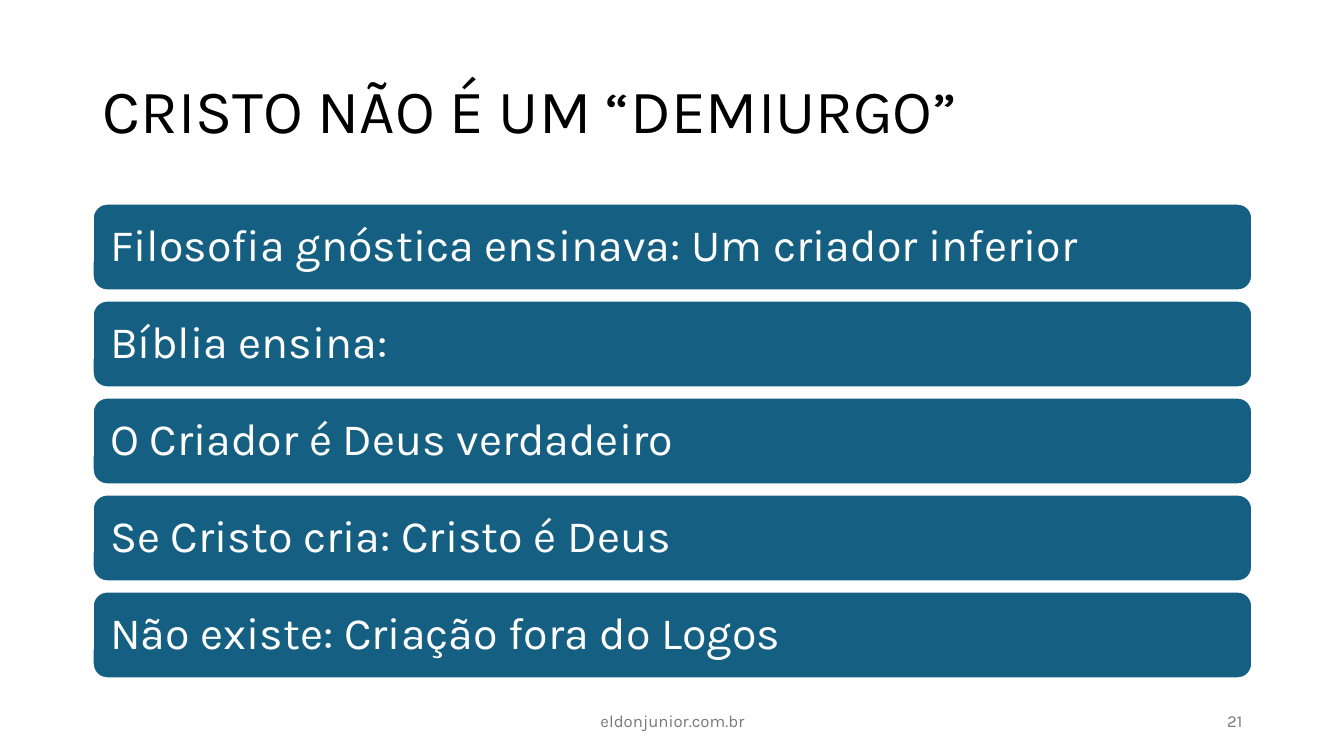
from pptx import Presentation
from pptx.dml.color import RGBColor
from pptx.enum.shapes import MSO_SHAPE as Shape
from pptx.enum.text import MSO_ANCHOR as Anchor, PP_ALIGN as Align
from pptx.util import Inches, Pt

BLACK = RGBColor(0x00, 0x00, 0x00)
WHITE = RGBColor(0xFF, 0xFF, 0xFF)
BLUE = RGBColor(0x15, 0x60, 0x82)
GRAY = RGBColor(0x79, 0x79, 0x79)
FONT = "Karla"
LEFT, WIDTH = 0.92, 11.5
POINTS = [
    "Filosofia gnóstica ensinava: Um criador inferior",
    "Bíblia ensina:",
    "O Criador é Deus verdadeiro",
    "Se Cristo cria: Cristo é Deus",
    "Não existe: Criação fora do Logos",
]


def write(shape, text, size, color, align=Align.LEFT, line=1.0, inset=None):
    frame = shape.text_frame
    frame.word_wrap = True
    frame.vertical_anchor = Anchor.MIDDLE
    if inset is not None:
        frame.margin_left = frame.margin_right = Inches(inset)
        frame.margin_top = frame.margin_bottom = Inches(inset)
    para = frame.paragraphs[0]
    para.alignment = align
    para.line_spacing = line
    run = para.add_run()
    run.text = text
    run.font.name = FONT
    run.font.size = Pt(size)
    run.font.color.rgb = color


def add_label(slide, box, text, size, color, **form):
    label = slide.shapes.add_textbox(*map(Inches, box))
    write(label, text, size, color, **form)


def add_bars(slide, box, items, gap):
    left, top, width, height = box
    tall = (height - gap * (len(items) - 1)) / len(items)
    for index, item in enumerate(items):
        place = (left, top + index * (tall + gap), width, tall)
        bar = slide.shapes.add_shape(Shape.ROUNDED_RECTANGLE, *map(Inches, place))
        bar.shadow.inherit = False
        bar.fill.solid()
        bar.fill.fore_color.rgb = BLUE
        bar.line.color.rgb = WHITE
        bar.line.width = Pt(1.5)
        write(bar, item, 32, WHITE, line=0.9, inset=0.13)


def add_footer(slide, box, site, number):
    left, top, width, height = box
    wide, slim = 4.5, 3
    middle = left + (width - wide) / 2
    add_label(slide, (middle, top, wide, height), site, 12, GRAY, align=Align.CENTER)
    end = left + width - slim
    add_label(slide, (end, top, slim, height), number, 12, GRAY, align=Align.RIGHT)


def main():
    deck = Presentation()
    deck.slide_width = Inches(13.33)
    deck.slide_height = Inches(7.5)
    slide = deck.slides.add_slide(deck.slide_layouts[6])
    title = "CRISTO NÃO É UM “DEMIURGO”"
    add_label(slide, (LEFT, 0.4, WIDTH, 1.45), title, 44, BLACK, line=0.9)
    add_bars(slide, (LEFT, 2.02, WIDTH, 4.71), POINTS, 0.1)
    add_footer(slide, (LEFT, 6.95, WIDTH, 0.4), "eldonjunior.com.br", "21")
    deck.save("out.pptx")


if __name__ == "__main__":
    main()
